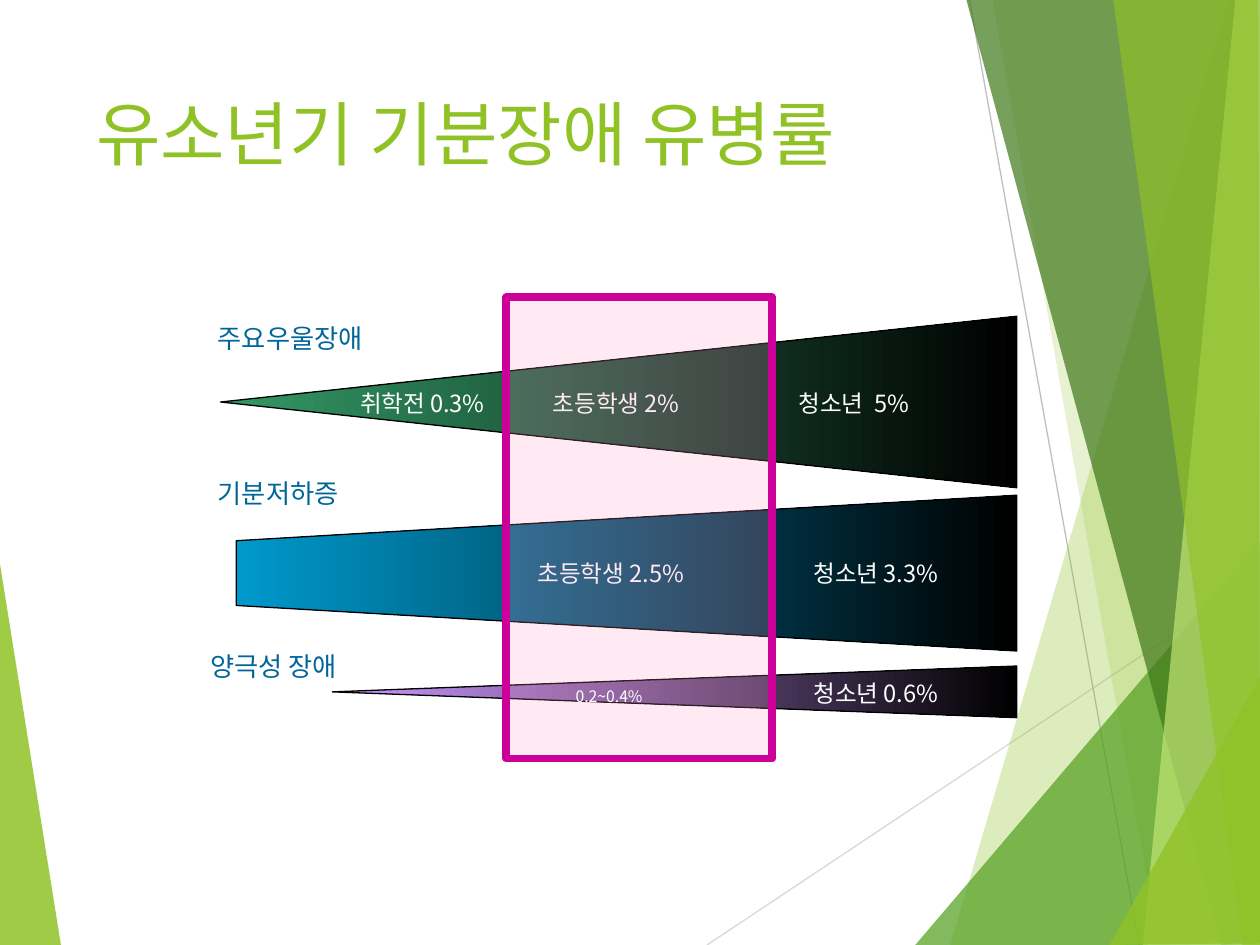
from lxml import etree
from pptx import Presentation
from pptx.dml.color import RGBColor
from pptx.enum.shapes import MSO_CONNECTOR, MSO_SHAPE
from pptx.enum.text import MSO_ANCHOR, MSO_AUTO_SIZE
from pptx.oxml.ns import qn
from pptx.util import Pt

STRAIGHT = MSO_CONNECTOR.STRAIGHT
TRIANGLE = MSO_SHAPE.ISOSCELES_TRIANGLE
RECTANGLE = MSO_SHAPE.RECTANGLE
TOP = MSO_ANCHOR.TOP
NO_AUTO_SIZE = MSO_AUTO_SIZE.NONE

GREEN = "90C226"
WHITE = "FFFFFF"
BLACK = "000000"
BLUE = "006699"
HANGUL_FONT = "Noto Sans CJK KR"
TITLE_FONT = "Karla"

FACETS = [
    ([(-1, 316), (35, 541), (-1, 540)], GREEN, 85),
    ([(702, 0), (543, 540), (721, 541), (721, 1)], GREEN, 30),
    ([(567, -1), (662, 540), (721, 540), (721, -1)], GREEN, 20),
    ([(523, 540), (720, 309), (721, 540)], "54A021", 72),
    ([(552, -1), (698, 540), (721, 539), (721, -1)], "3F7819", 70),
    ([(706, -1), (653, 540), (721, 540), (720, -1)], "C0E474", 70),
    ([(636, -1), (710, 540), (720, 540), (719, -1)], GREEN, 65),
    ([(634, 540), (721, 385), (721, 539)], GREEN, 80),
]
RAYS = [
    ((404, 540), (721, 329), "D9D9D9"),
    ((554, 0), (651, 540), "BFBFBF"),
]
RATES = [
    ("취학전 0.3%", 198.7, 218.9, 98),
    ("초등학생 2%", 308.9, 218.9, 98),
    ("청소년  5%", 449.3, 218.9, 94),
    ("초등학생 2.5%", 300.2, 316.1, 123),
    ("청소년 3.3%", 457.9, 316.1, 94),
    ("청소년 0.6%", 457.9, 384.5, 94),
]
DISORDERS = [
    ("주요우울장애", 117.4, 180.7),
    ("기분저하증", 117.4, 269.3),
    ("양극성 장애", 113, 367.9),
]


def color(value):
    """Turn a hex string into a colour."""
    return RGBColor.from_string(value)


class SlideWriter:
    """Draws styled elements on the current slide, with lengths in points."""

    def __init__(self, slide, font):
        self.slide = slide
        self.shapes = slide.shapes
        self.font = font

    def outline(self, shape, value, width):
        shape.line.color.rgb = color(value)
        shape.line.width = Pt(width)

    def solid(self, shape, value, opacity):
        shape.fill.solid()
        shape.fill.fore_color.rgb = color(value)
        tone = shape.fill._xPr.find(qn("a:solidFill"))[0]
        etree.SubElement(tone, qn("a:alpha")).set("val", str(opacity * 1000))

    def gradient(self, shape, start, end, angle):
        shape.fill.gradient()
        shape.fill.gradient_angle = angle
        for stop, value in zip(shape.fill.gradient_stops, (start, end)):
            stop.color.rgb = color(value)
        self.outline(shape, BLACK, 0.75)

    def polygon(self, points):
        corners = [(Pt(x), Pt(y)) for x, y in points]
        builder = self.shapes.build_freeform(*corners[0], scale=1.0)
        builder.add_line_segments(corners[1:], close=True)
        shape = builder.convert_to_shape()
        shape.shadow.inherit = False
        return shape

    def facet(self, points, value, opacity):
        shape = self.polygon(points)
        self.solid(shape, value, opacity)
        shape.line.fill.background()

    def ray(self, start, end, value):
        line = self.shapes.add_connector(STRAIGHT, *map(Pt, start + end))
        self.outline(line, value, 0.75)
        etree.SubElement(line._element.spPr, qn("a:effectLst"))

    def trapezoid(self, points, value):
        self.gradient(self.polygon(points), value, BLACK, 0)

    def wedge(self, left, top, width, height, value):
        frame_left = left + (width - height) / 2
        frame_top = top + (height - width) / 2
        shape = self.shapes.add_shape(
            TRIANGLE, Pt(frame_left), Pt(frame_top), Pt(height), Pt(width))
        shape.rotation = 270
        shape.shadow.inherit = False
        self.gradient(shape, value, BLACK, 270)

    def highlight(self, left, top, width, height):
        shape = self.shapes.add_shape(
            RECTANGLE, Pt(left), Pt(top), Pt(width), Pt(height))
        shape.shadow.inherit = False
        self.solid(shape, "FF99CC", 20)
        self.outline(shape, "CC0099", 4.5)

    def text(self, words, left, top, width, height, size, value, font=None):
        box = self.shapes.add_textbox(Pt(left), Pt(top), Pt(width), Pt(height))
        frame = {"word_wrap": True, "auto_size": NO_AUTO_SIZE, "vertical_anchor": TOP}
        for name, setting in frame.items():
            setattr(box.text_frame, name, setting)
        para = box.text_frame.paragraphs[0]
        span = para.add_run()
        span.text = words
        for name, setting in {"size": Pt(size), "name": font or self.font}.items():
            setattr(span.font, name, setting)
        span.font.color.rgb = color(value)
        east_asian = etree.SubElement(span.font._element, qn("a:ea"))
        east_asian.set("typeface", self.font)


def main():
    deck = Presentation()
    deck.slide_width, deck.slide_height = Pt(720), Pt(540)
    page = SlideWriter(deck.slides.add_slide(deck.slide_layouts[6]), HANGUL_FONT)

    page.facet(*FACETS[0])
    for ray in RAYS:
        page.ray(*ray)
    for facet in FACETS[1:]:
        page.facet(*facet)

    page.trapezoid([(581, 283), (135, 309), (135, 346), (581, 372)], "0099CC")
    page.text("유소년기 기분장애 유병률", 48, 48, 500, 104, 40, GREEN, TITLE_FONT)
    page.wedge(126, 180.7, 455, 98, "339966")
    page.wedge(190, 380.6, 391, 29.5, "CC99FF")
    for words, left, top, width in RATES:
        page.text(words, left, top, width, 24, 13.5, WHITE)
    page.highlight(289.4, 170, 152, 263.5)
    for words, left, top in DISORDERS:
        page.text(words, left, top, 191.5, 25, 15, BLUE)
    page.text("0.2~0.4%", 321.8, 388.8, 98, 18, 9, WHITE)
    deck.save("out.pptx")


if __name__ == "__main__":
    main()
